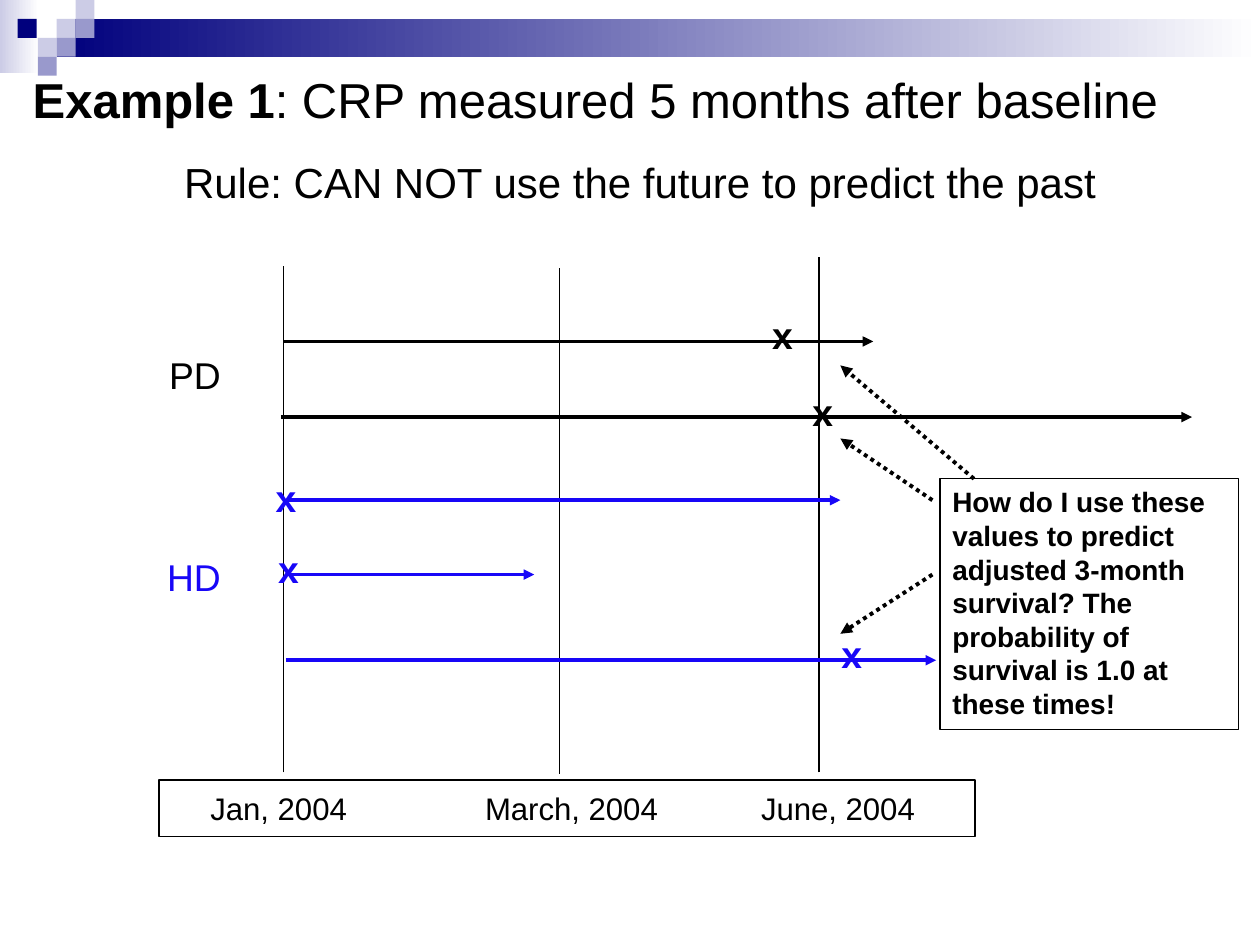
from lxml import etree
from pptx import Presentation
from pptx.dml.color import RGBColor
from pptx.enum.dml import MSO_LINE
from pptx.enum.shapes import MSO_CONNECTOR, MSO_SHAPE
from pptx.enum.text import MSO_ANCHOR, MSO_AUTO_SIZE, PP_ALIGN
from pptx.oxml.ns import qn
from pptx.util import Inches, Pt

RECTANGLE = MSO_SHAPE.RECTANGLE
STRAIGHT = MSO_CONNECTOR.STRAIGHT
DOTTED = MSO_LINE.ROUND_DOT
LEFT, CENTER, RIGHT = PP_ALIGN.LEFT, PP_ALIGN.CENTER, PP_ALIGN.RIGHT
BLACK, BLUE = "000000", "1807F7"
NAVY, LILAC, VIOLET, WHITE = "00007D", "CCCCE6", "9999CC", "FFFFFF"


def color(value):
    return RGBColor.from_string(value)


def add_text(text, left, top, width, height, size, ink=BLACK, bold=False, align=LEFT, wrap=True):
    shape = slide.shapes.add_textbox(Inches(left), Inches(top), Inches(width), Inches(height))
    shape.text_frame.word_wrap = wrap
    paragraph = shape.text_frame.paragraphs[0]
    paragraph.text = text
    paragraph.alignment = align
    paragraph.font.name = "Arial"
    paragraph.font.size = Pt(size)
    paragraph.font.bold = bold
    paragraph.font.color.rgb = color(ink)
    return shape


presentation = Presentation()
presentation.slide_width = Inches(10)
presentation.slide_height = Inches(7.5)
slide = presentation.slides.add_slide(presentation.slide_layouts[5])

banner = [
    (0, 0, 0.31, 0.58, LILAC, True),
    (0.45, 0.15, 9.55, 0.3, NAVY, True),
]
squares = [
    (0.45, 0.15, LILAC), (0.6, 0, LILAC), (0.6, 0.15, VIOLET), (0.3, 0.3, LILAC),
    (0.14, 0.15, NAVY), (0.45, 0.3, VIOLET), (0.3, 0.45, VIOLET),
]
banner += [(left, top, 0.15, 0.15, fill, False) for left, top, fill in squares]
for left, top, width, height, fill, fades in banner:
    shape = slide.shapes.add_shape(
        RECTANGLE, Inches(left), Inches(top), Inches(width), Inches(height))
    shape.shadow.inherit = False
    shape.line.fill.background()
    if fades:
        shape.fill.gradient()
        shape.fill.gradient_angle = 0
        for stop, stop_color in zip(shape.fill.gradient_stops, (fill, WHITE)):
            stop.color.rgb = color(stop_color)
    else:
        shape.fill.solid()
        shape.fill.fore_color.rgb = color(fill)

title = slide.shapes.title
title.left, title.top = Inches(0.16), Inches(0.54)
title.width, title.height = Inches(9.72), Inches(0.49)
title.text_frame.auto_size = MSO_AUTO_SIZE.NONE
title.text_frame.vertical_anchor = MSO_ANCHOR.MIDDLE
paragraph = title.text_frame.paragraphs[0]
paragraph.alignment = LEFT
paragraph.font.name = "Arial"
paragraph.font.size = Pt(28)
paragraph.font.color.rgb = color(BLACK)
for text, bold in (("Example 1", True), (": CRP measured 5 months after baseline", False)):
    run = paragraph.add_run()
    run.text = text
    run.font.bold = bold

add_text("Rule: CAN NOT use the future to predict the past", 0.16, 1.19, 9.84, 0.5, 24, align=CENTER)
add_text("PD", 0.51, 2.75, 1.34, 0.46, 21.3, align=RIGHT)
add_text("HD", 0.51, 4.35, 1.34, 0.46, 21.3, BLUE, align=RIGHT)

date_lines = [(2.25, 6.13, 2.25, 2.11), (4.44, 6.14, 4.44, 2.13), (6.5, 6.13, 6.5, 2.04)]
patients = [
    (2.25, 6.93, 2.71, BLACK), (2.23, 9.46, 3.31, BLACK),
    (2.28, 6.67, 3.97, BLUE), (2.27, 4.24, 4.56, BLUE), (2.27, 7.43, 5.24, BLUE),
]
pointers = [(7.4, 4.56, 6.67, 5.03), (7.4, 3.97, 6.67, 3.48), (7.73, 3.8, 6.67, 2.9)]

lines = [(ends, BLACK, 1, False, None) for ends in date_lines]
lines += [((start, y, end, y), ink, 2, True, None) for start, end, y, ink in patients]
lines += [(ends, BLACK, 2.25, True, DOTTED) for ends in pointers]
for ends, ink, weight, has_arrow, dash in lines:
    connector = slide.shapes.add_connector(STRAIGHT, *map(Inches, ends))
    connector.line.color.rgb = color(ink)
    connector.line.width = Pt(weight)
    if dash:
        connector.line.dash_style = dash
    if has_arrow:
        etree.SubElement(connector.line._get_or_add_ln(), qn("a:tailEnd"), type="triangle")
    etree.SubElement(connector._element.spPr, qn("a:effectLst"))

measurements = [
    (6.03, 2.43, BLACK), (6.35, 3.04, BLACK),
    (2.09, 3.72, BLUE), (2.11, 4.29, BLUE), (6.58, 4.96, BLUE),
]
for left, top, ink in measurements:
    add_text("x", left, top, 0.37, 0.46, 21.3, ink, bold=True, wrap=False)

date_box = add_text("Jan, 2004\tMarch, 2004\tJune, 2004", 1.26, 6.19, 6.48, 0.45, 17.8)
date_box.line.color.rgb = color(BLACK)
date_box.line.width = Pt(1)
date_box.text_frame.margin_left = Inches(0.41)
date_box.text_frame.vertical_anchor = MSO_ANCHOR.MIDDLE
properties = date_box.text_frame.paragraphs[0]._p.get_or_add_pPr()
tab_list = etree.Element(qn("a:tabLst"))
for position in (2.18, 4.37):
    etree.SubElement(tab_list, qn("a:tab"), pos=str(Inches(position)), algn="l")
properties.find(qn("a:defRPr")).addprevious(tab_list)

question = add_text(
    "How do I use these values to predict adjusted 3-month survival? "
    "The probability of survival is 1.0 at these times!",
    7.46, 3.8, 2.37, 1.99, 16, bold=True)
question.line.color.rgb = color(BLACK)
question.line.width = Pt(0.75)

presentation.save("out.pptx")
